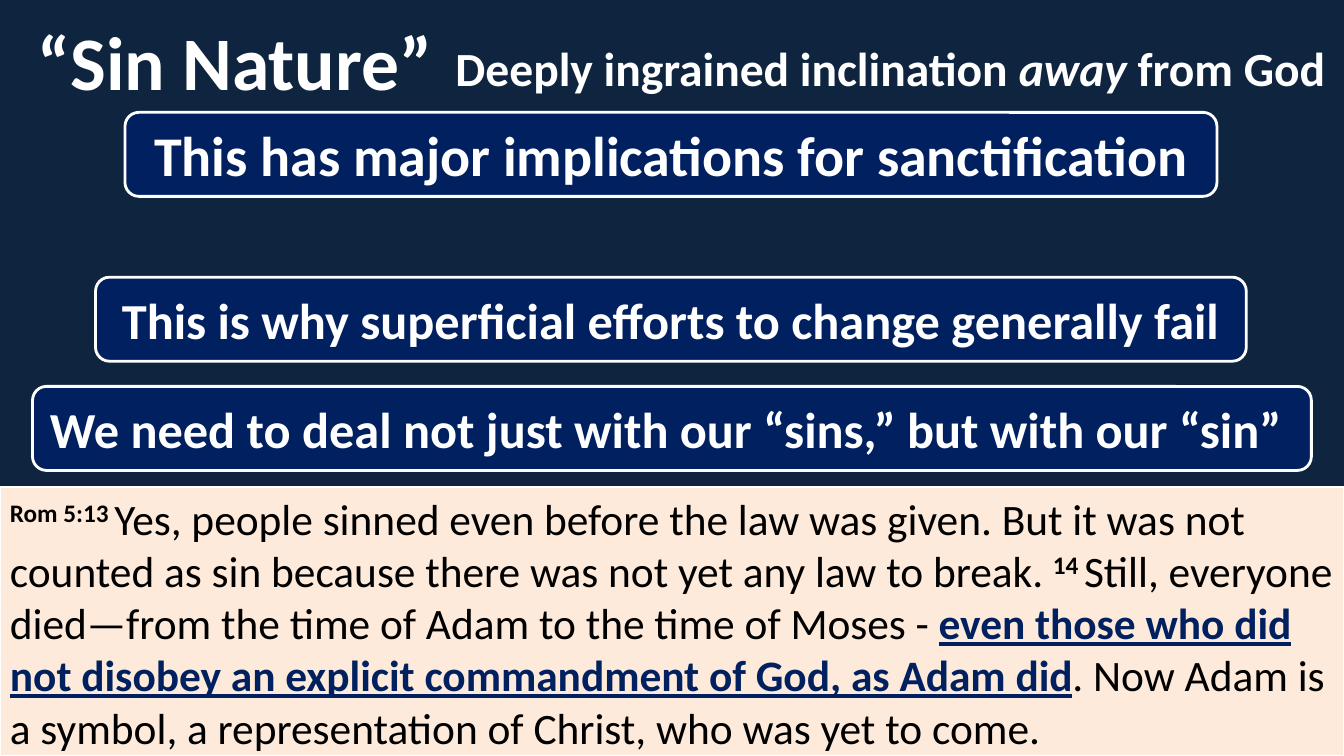
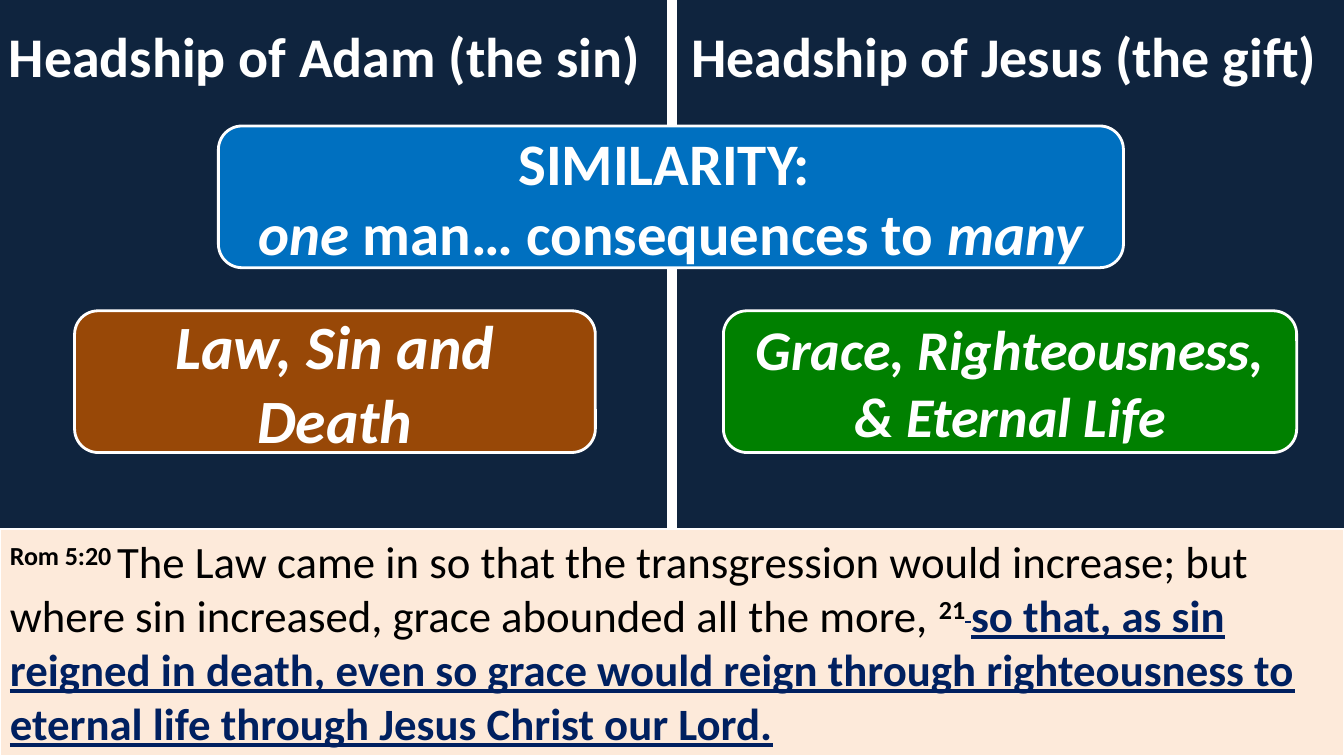
from lxml import etree
from pptx import Presentation
from pptx.dml.color import RGBColor
from pptx.enum.shapes import MSO_CONNECTOR, MSO_SHAPE
from pptx.enum.text import MSO_ANCHOR, PP_ALIGN
from pptx.oxml.ns import qn
from pptx.util import Pt

PX = 9525
WIDTH, HEIGHT = 1280, 720
FONT = "Calibri"
BACKGROUND = RGBColor(0x0F, 0x24, 0x3E)
WHITE = RGBColor(0xFF, 0xFF, 0xFF)
BLACK = RGBColor(0x00, 0x00, 0x00)
NAVY = RGBColor(0x00, 0x20, 0x60)
CREAM = RGBColor(0xFD, 0xEA, 0xDA)
BROWN = RGBColor(0x98, 0x48, 0x07)
GREEN = RGBColor(0x00, 0x80, 0x00)
BLUE = RGBColor(0x00, 0x70, 0xC0)
RECTANGLE = MSO_SHAPE.RECTANGLE
ROUNDED = MSO_SHAPE.ROUNDED_RECTANGLE
LEFT, CENTER = PP_ALIGN.LEFT, PP_ALIGN.CENTER
TOP, MIDDLE = MSO_ANCHOR.TOP, MSO_ANCHOR.MIDDLE


def write_text(box, paragraphs, size, color=WHITE, align=CENTER, anchor=MIDDLE):
    """Each run is (text, style); style letters: b bold, i italic, u underline,
    s superscript, n navy."""
    frame = box.text_frame
    frame.word_wrap = True
    frame.vertical_anchor = anchor
    for number, runs in enumerate(paragraphs):
        para = frame.add_paragraph() if number else frame.paragraphs[0]
        para.alignment = align
        for text, style in runs:
            span = para.add_run()
            span.text = text
            font = span.font
            font.name, font.size = FONT, Pt(size)
            font.bold = "b" in style
            font.italic = "i" in style
            font.underline = "u" in style
            font.color.rgb = NAVY if "n" in style else color
            if "s" in style:
                span._r.get_or_add_rPr().set("baseline", "30000")


def add_panel(page, kind, bounds, fill, line_width):
    panel = page.shapes.add_shape(kind, *[value * PX for value in bounds])
    panel.shadow.inherit = False
    panel.fill.solid()
    panel.fill.fore_color.rgb = fill
    panel.line.color.rgb = WHITE
    panel.line.width = Pt(line_width)
    return panel


deck = Presentation()
deck.slide_width, deck.slide_height = WIDTH * PX, HEIGHT * PX

sin_nature = {
    "headings": [
        ((0, 12, 448, 91), MIDDLE, 54, [("“Sin Nature”", "b")]),
        ((416, 32, 864, 64), MIDDLE, 34, [
            ("Deeply ingrained inclination ", "b"),
            ("away", "bi"),
            (" from God", "b"),
        ]),
    ],
    "divided": False,
    "verse_top": 464,
    "verse_size": 31,
    "verse": [
        ("Rom 5:13 ", "bs"),
        ("Yes, people sinned even before the law was given. But it was not "
         "counted as sin because there was not yet any law to break. ", ""),
        ("14 ", "bs"),
        ("Still, everyone died—from the time of Adam to the time of Moses - ", ""),
        ("even those who did not disobey an explicit commandment of God, "
         "as Adam did", "bun"),
        (". Now Adam is a symbol, a representation of Christ, "
         "who was yet to come.", ""),
    ],
    "boxes": [
        ((119, 107, 1040, 80), NAVY, 40,
         [[("This has major implications for sanctification", "b")]]),
        ((91, 264, 1096, 80), NAVY, 36,
         [[("This is why superficial efforts to change generally fail", "b")]]),
        ((31, 368, 1218, 80), NAVY, 36,
         [[("We need to deal not just with our “sins,” but with our “sin” ", "b")]]),
    ],
}

headship = {
    "headings": [
        ((0, 16, 618, 104), TOP, 40, [("Headship of Adam (the sin)", "b")]),
        ((640, 16, 632, 104), TOP, 40, [("Headship of Jesus (the gift)", "b")]),
    ],
    "divided": True,
    "verse_top": 504,
    "verse_size": 32,
    "verse": [
        ("Rom 5:20 ", "bs"),
        ("The Law came in so that the transgression would increase; but where "
         "sin increased, grace abounded all the more, ", ""),
        ("21", "bs"),
        (" ", "bsun"),
        ("so that, as sin reigned in death, even so grace would reign through "
         "righteousness to eternal life through Jesus Christ our Lord.", "bun"),
    ],
    "boxes": [
        ((71, 296, 496, 135), BROWN, 44, [[("Law, Sin and Death", "bi")]]),
        ((689, 296, 546, 135), GREEN, 40,
         [[("Grace, Righteousness, & Eternal Life", "bi")]]),
        ((208, 120, 862, 135), BLUE, 42, [
            [("SIMILARITY: ", "b")],
            [("one", "bi"), (" man… consequences to ", "b"), ("many", "bi")],
        ]),
    ],
}

for content in (sin_nature, headship):
    page = deck.slides.add_slide(deck.slide_layouts[6])
    page.background.fill.solid()
    page.background.fill.fore_color.rgb = BACKGROUND

    for bounds, anchor, size, runs in content["headings"]:
        heading = page.shapes.add_textbox(*[value * PX for value in bounds])
        heading.text_frame.margin_left = heading.text_frame.margin_right = 0
        write_text(heading, [runs], size, anchor=anchor)

    verse_top = content["verse_top"]
    if content["divided"]:
        middle = WIDTH // 2 * PX
        divider = page.shapes.add_connector(
            MSO_CONNECTOR.STRAIGHT, middle, 0, middle, verse_top * PX)
        divider.line.color.rgb = WHITE
        divider.line.width = Pt(7.25)
        etree.SubElement(divider._element.spPr, qn("a:effectLst"))

    verse_bounds = (0, verse_top, WIDTH, HEIGHT - verse_top)
    verse = add_panel(page, RECTANGLE, verse_bounds, CREAM, 1.5)
    write_text(verse, [content["verse"]], content["verse_size"], BLACK, LEFT, TOP)

    for bounds, fill, size, paragraphs in content["boxes"]:
        box = add_panel(page, ROUNDED, bounds, fill, 2)
        write_text(box, paragraphs, size)

deck.save("out.pptx")
